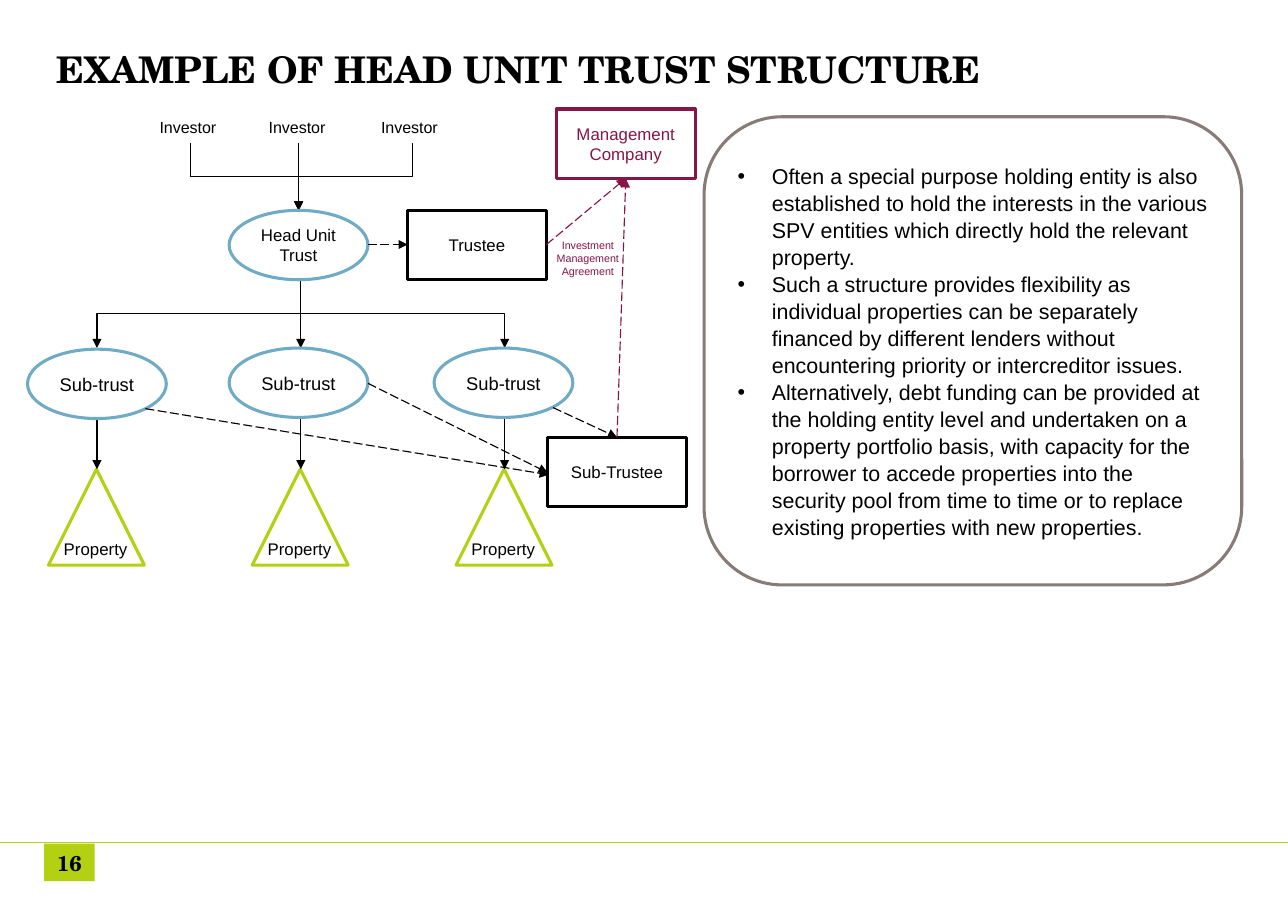
from dataclasses import dataclass
from typing import Optional

from lxml.etree import SubElement
from pptx import Presentation
from pptx.dml.color import RGBColor
from pptx.enum.dml import MSO_LINE
from pptx.enum.shapes import MSO_CONNECTOR, MSO_SHAPE
from pptx.enum.text import MSO_ANCHOR, PP_ALIGN
from pptx.oxml.ns import qn
from pptx.util import Inches, Pt

BLACK = RGBColor(0, 0, 0)
WHITE = RGBColor(255, 255, 255)
LIME = RGBColor(0xB4, 0xD0, 0x12)
BLUE = RGBColor(0x70, 0xAB, 0xC6)
PLUM = RGBColor(0x86, 0x16, 0x48)
TAUPE = RGBColor(0x87, 0x7B, 0x77)
SANS, SERIF = "Arial", "TeX Gyre Schola"
NODE_W, NODE_H = 1.26, 0.63

BULLETS = [
    "Often a special purpose holding entity is also established to hold the "
    "interests in the various SPV entities which directly hold the relevant property.",
    "Such a structure provides flexibility as individual properties can be separately "
    "financed by different lenders without encountering priority or intercreditor issues.",
    "Alternatively, debt funding can be provided at the holding entity level and "
    "undertaken on a property portfolio basis, with capacity for the borrower to accede "
    "properties into the security pool from time to time or to replace existing "
    "properties with new properties.",
]


@dataclass
class Node:
    text: str
    x: float
    y: float
    line: RGBColor
    kind: MSO_SHAPE = MSO_SHAPE.RECTANGLE
    color: RGBColor = BLACK
    size: float = 11


@dataclass
class Arrow:
    x1: float
    y1: float
    x2: float
    y2: float
    color: RGBColor = BLACK
    dashed: bool = False
    head: bool = True


NODES = [
    Node("Trustee", 3.7, 1.91, BLACK),
    Node("Sub-trust", 0.25, 3.17, BLUE, MSO_SHAPE.OVAL, size=12),
    Node("Sub-trust", 2.08, 3.16, BLUE, MSO_SHAPE.OVAL, size=12),
    Node("Sub-trust", 3.94, 3.16, BLUE, MSO_SHAPE.OVAL, size=12),
    Node("Head Unit Trust", 2.08, 1.91, BLUE, MSO_SHAPE.OVAL),
    Node("Management Company", 5.05, 0.99, PLUM, color=PLUM),
    Node("Sub-Trustee", 4.97, 3.97, BLACK),
]
TRUSTEE_ARROWS = [
    Arrow(1.32, 3.71, 4.98, 4.31, dashed=True),
    Arrow(3.34, 3.48, 4.97, 4.29, dashed=True),
    Arrow(5.02, 3.7, 5.6, 3.97, dashed=True),
    Arrow(3.34, 2.22, 3.7, 2.22, dashed=True),
    Arrow(4.96, 2.22, 5.68, 1.62, PLUM, True),
    Arrow(5.6, 3.97, 5.68, 1.62, PLUM, True),
]

prs = Presentation()
prs.slide_width, prs.slide_height = Inches(11.69), Inches(8.27)
s = prs.slides.add_slide(prs.slide_layouts[6])


def add_run(p, text: str, size: float, color: RGBColor = BLACK,
            font: str = SANS, bold: bool = False) -> None:
    r = p.add_run()
    r.text = text
    r.font.size, r.font.name, r.font.bold = Pt(size), font, bold
    r.font.color.rgb = color


def add_outline(kind: MSO_SHAPE, x: float, y: float, w: float, h: float,
                line: Optional[RGBColor], fill: Optional[RGBColor] = None):
    sp = s.shapes.add_shape(kind, Inches(x), Inches(y), Inches(w), Inches(h))
    sp.shadow.inherit = False
    if fill is None:
        sp.fill.background()
    else:
        sp.fill.solid()
        sp.fill.fore_color.rgb = fill
    if line is None:
        sp.line.fill.background()
    else:
        sp.line.color.rgb = line
        sp.line.width = Pt(2)
    sp.text_frame.word_wrap = True
    sp.text_frame.vertical_anchor = MSO_ANCHOR.MIDDLE
    return sp


def add_label(text: str, x: float, y: float, w: float, h: float, size: float,
              color: RGBColor = BLACK, align: PP_ALIGN = PP_ALIGN.LEFT,
              wrap: bool = True) -> None:
    tf = s.shapes.add_textbox(Inches(x), Inches(y), Inches(w), Inches(h)).text_frame
    tf.word_wrap = wrap
    tf.paragraphs[0].alignment = align
    add_run(tf.paragraphs[0], text, size, color)


def add_node(n: Node) -> None:
    fill = WHITE if n.kind == MSO_SHAPE.RECTANGLE else None
    p = add_outline(n.kind, n.x, n.y, NODE_W, NODE_H, n.line, fill).text_frame.paragraphs[0]
    p.alignment = PP_ALIGN.CENTER
    add_run(p, n.text, n.size, n.color)


def add_arrow(a: Arrow, kind: MSO_CONNECTOR = MSO_CONNECTOR.STRAIGHT):
    c = s.shapes.add_connector(kind, Inches(a.x1), Inches(a.y1), Inches(a.x2), Inches(a.y2))
    c.line.color.rgb = a.color
    c.line.width = Pt(0.75)
    if a.dashed:
        c.line.dash_style = MSO_LINE.LONG_DASH
    if a.head:
        SubElement(c.line._get_or_add_ln(), qn("a:tailEnd"), type="triangle")
    SubElement(c._element.spPr, qn("a:effectLst"))
    return c


def add_elbow(x1: float, y1: float, x2: float, y2: float) -> None:
    """Arrow that leaves and arrives vertically: a turned elbow connector."""
    cx, cy = (x1 + x2) / 2, (y1 + y2) / 2
    half_w, half_h = (y2 - y1) / 2, abs(x2 - x1) / 2
    c = add_arrow(Arrow(cx - half_w, cy - half_h, cx + half_w, cy + half_h),
                  MSO_CONNECTOR.ELBOW)
    xfrm = c._element.spPr.xfrm
    xfrm.set("rot", str((270 if x2 > x1 else 90) * 60000))
    if x2 > x1:
        xfrm.set("flipH", "1")


# Footer
add_arrow(Arrow(0, 7.65, 11.69, 7.65, LIME, head=False))
tf = add_outline(MSO_SHAPE.RECTANGLE, 0.4, 7.66, 0.46, 0.34, None, LIME).text_frame
tf.margin_left = tf.margin_right = Inches(0.02)
tf.paragraphs[0].alignment = PP_ALIGN.CENTER
add_run(tf.paragraphs[0], "16", 14, font=SERIF, bold=True)

# Title
tf = s.shapes.add_textbox(Inches(0.4), Inches(0.01), Inches(10.88), Inches(1.22)).text_frame
tf.word_wrap = True
tf.vertical_anchor = MSO_ANCHOR.MIDDLE
tf.margin_left = tf.margin_right = Inches(0.11)
add_run(tf.paragraphs[0], "EXAMPLE OF HEAD UNIT TRUST STRUCTURE", 24, font=SERIF, bold=True)

# Investors feeding the head trust
for x, label_x in ((1.73, 1.35), (2.71, 2.34), (3.74, 3.36)):
    add_label("Investor", label_x, 1.02, 0.75, 0.29, 10.5)
    if x == 2.71:
        add_arrow(Arrow(x, 1.3, x, 1.91))
    else:
        add_elbow(x, 1.3, 2.71, 1.91)

# Head trust to sub-trusts, and each sub-trust to its property
for i in range(3):
    x = 0.88 + 1.85 * i
    if i == 1:
        add_arrow(Arrow(x, 2.53, x, 3.16))
    else:
        add_elbow(2.73, 2.53, x, 3.16)
    add_outline(MSO_SHAPE.ISOSCELES_TRIANGLE, x - 0.44, 4.26, 0.87, 0.87, LIME)
    add_label("Property", x - 0.4, 4.84, 0.78, 0.29, 11, wrap=False)
    add_arrow(Arrow(x, 3.79, x, 4.26))

# Entities, trustee links and agreement
for node in NODES:
    add_node(node)
for arrow in TRUSTEE_ARROWS:
    add_arrow(arrow)
add_label("Investment Management Agreement", 4.89, 2.12, 0.89, 0.45, 7, PLUM, PP_ALIGN.CENTER)

# Commentary panel
tf = add_outline(MSO_SHAPE.ROUNDED_RECTANGLE, 6.39, 1.06, 4.88, 4.25, TAUPE).text_frame
for i, text in enumerate(BULLETS):
    p = tf.add_paragraph() if i else tf.paragraphs[0]
    p.alignment = PP_ALIGN.LEFT
    p.line_spacing = 1.05
    pPr = p._p.get_or_add_pPr()
    pPr.set("marL", str(Inches(0.31)))
    pPr.set("indent", str(-Inches(0.31)))
    SubElement(pPr, qn("a:buFont"), typeface=SANS)
    SubElement(pPr, qn("a:buChar"), char="•")
    add_run(p, text, 14)

prs.save("out.pptx")
